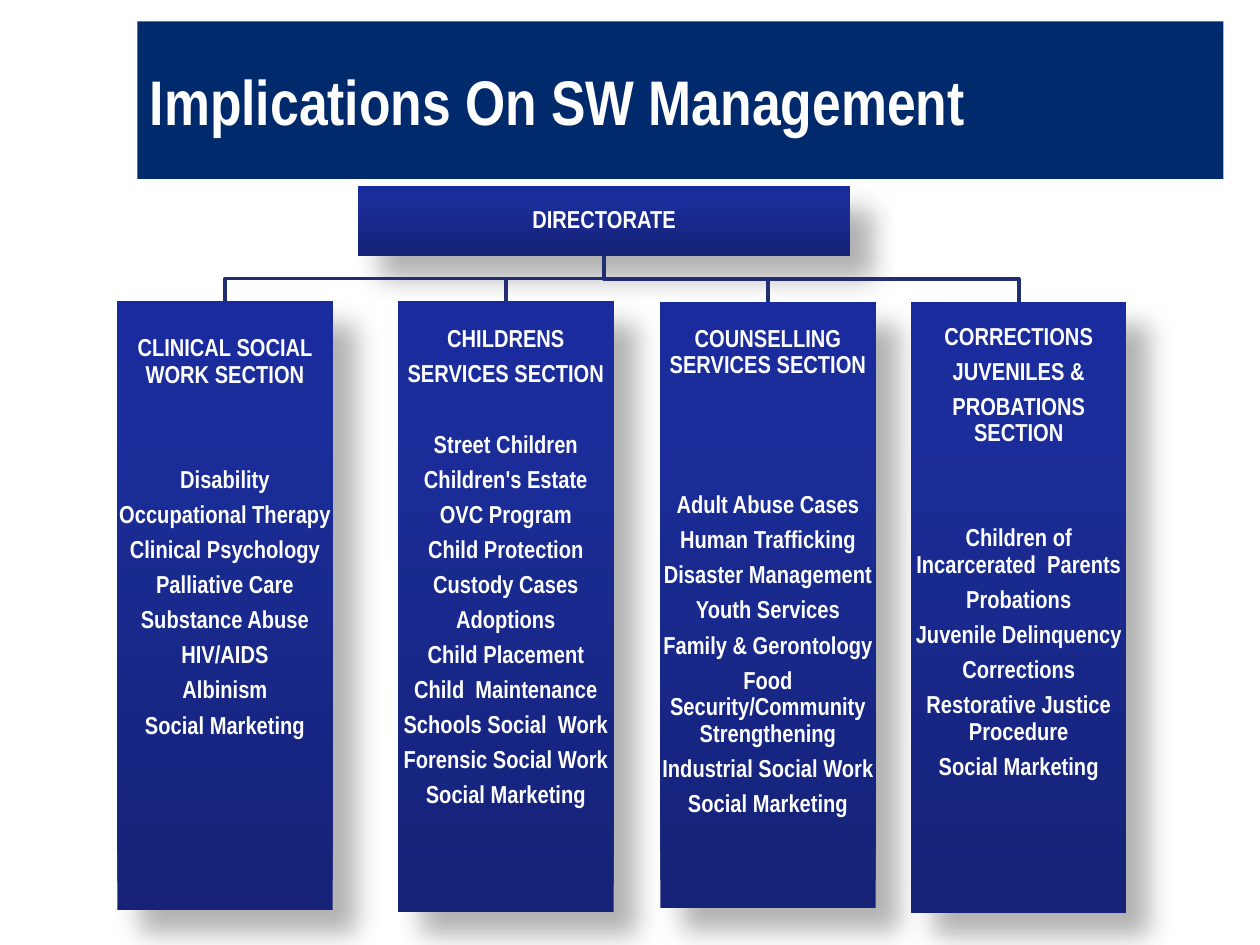
"""Build the social work management organisation chart slide."""
from lxml.etree import SubElement
from pptx import Presentation
from pptx.dml.color import RGBColor
from pptx.enum.shapes import MSO_CONNECTOR, MSO_SHAPE
from pptx.enum.text import MSO_ANCHOR, PP_ALIGN
from pptx.oxml.ns import qn
from pptx.util import Pt

COLORS = {"title": "002A6C", "line": "222E73", "text": "FFFFFF", "shadow": "000000"}
GRADIENT = [(0, "152277"), (80, "1B2D9A"), (100, "192B9D")]
FONT = "Arial Narrow"
TITLE = "Implications On SW Management"
DIRECTORATE = "DIRECTORATE"
SECTIONS = [
    {
        "box": (67, 172.1, 347.8), "inset": 19.8, "gap": 40,
        "heading": ["CLINICAL SOCIAL WORK SECTION"],
        "items": ["Disability", "Occupational Therapy", "Clinical Psychology", "Palliative Care",
                  "Substance Abuse", "HIV/AIDS", "Albinism", "Social Marketing"],
    },
    {
        "box": (227.5, 172.1, 349.2), "inset": 14.6, "gap": 20,
        "heading": ["CHILDRENS", "SERVICES SECTION"],
        "items": ["Street Children", "Children's Estate", "OVC Program", "Child Protection",
                  "Custody Cases", "Adoptions", "Child Placement", "Child  Maintenance",
                  "Schools Social  Work", "Forensic Social Work", "Social Marketing"],
    },
    {
        "box": (377.3, 172.8, 346.3), "inset": 13.5, "gap": 60,
        "heading": ["COUNSELLING SERVICES SECTION"],
        "items": ["Adult Abuse Cases", "Human Trafficking", "Disaster Management",
                  "Youth Services", "Family & Gerontology",
                  "Food Security/Community Strengthening", "Industrial Social Work",
                  "Social Marketing"],
    },
    {
        "box": (520.6, 172.8, 349.2), "inset": 12.3, "gap": 40,
        "heading": ["CORRECTIONS", "JUVENILES &", "PROBATIONS SECTION"],
        "items": ["Children of Incarcerated  Parents", "Probations", "Juvenile Delinquency",
                  "Corrections", "Restorative Justice Procedure", "Social Marketing"],
    },
]
SECTION_WIDTH = 123.1
INSET = 0.72


def add_run(paragraph, text, size):
    run = paragraph.add_run()
    run.text = text
    run.font.name = FONT
    run.font.size = Pt(size)
    run.font.bold = True
    run.font.color.rgb = RGBColor.from_string(COLORS["text"])


def add_rectangle(slide, left, top, width, height):
    shape = slide.shapes.add_shape(
        MSO_SHAPE.RECTANGLE, Pt(left), Pt(top), Pt(width), Pt(height))
    shape.shadow.inherit = False
    shape.line.fill.background()
    shape.text_frame.word_wrap = True
    return shape


def add_color(parent, color):
    return SubElement(parent, qn("a:srgbClr"), val=color)


def style_box(shape):
    shape.fill.gradient()
    shape.fill.gradient_angle = 90
    properties = shape.element.spPr
    stops = properties.find(qn("a:gradFill")).find(qn("a:gsLst"))
    for stop in list(stops):
        stops.remove(stop)
    for position, color in GRADIENT:
        add_color(SubElement(stops, qn("a:gs"), pos=str(position * 1000)), color)
    shadow = SubElement(
        properties.find(qn("a:effectLst")), qn("a:outerShdw"), blurRad=str(Pt(15)),
        dist=str(Pt(18)), dir=str(45 * 60000), algn="ctr", rotWithShape="0")
    SubElement(add_color(shadow, COLORS["shadow"]), qn("a:alpha"), val="30000")


def fill_box(shape, lines, anchor, top_inset=INSET, gap_index=None, gap=0):
    frame = shape.text_frame
    frame.vertical_anchor = anchor
    frame.margin_left = frame.margin_right = frame.margin_bottom = Pt(INSET)
    frame.margin_top = Pt(top_inset)
    for index, text in enumerate(lines):
        paragraph = frame.add_paragraph() if index else frame.paragraphs[0]
        paragraph.alignment = PP_ALIGN.CENTER
        paragraph.line_spacing = 0.9
        paragraph.space_after = Pt(4.9)
        if index == gap_index:
            paragraph.space_before = Pt(gap)
        add_run(paragraph, text, 14)


def add_branch(slide, parent, child):
    start_x, start_y = parent.left + parent.width // 2, parent.top + parent.height
    end_x, end_y = child.left + child.width // 2, child.top
    connector = slide.shapes.add_connector(
        MSO_CONNECTOR.ELBOW, start_x, start_y, end_x, end_y)
    connector.begin_connect(parent, 2)
    connector.end_connect(child, 0)
    connector.line.color.rgb = RGBColor.from_string(COLORS["line"])
    connector.line.width = Pt(2)
    properties = connector.element.spPr
    SubElement(properties, qn("a:effectLst"))
    to_right = end_x > start_x
    transform = properties.find(qn("a:xfrm"))
    transform.set("rot", str((270 if to_right else 90) * 60000))
    transform.set("flipH", "1" if to_right else "0")
    transform.set("flipV", "0")
    connector.width, connector.height = end_y - start_y, abs(end_x - start_x)
    connector.left = (start_x + end_x - connector.width) // 2
    connector.top = (start_y + end_y - connector.height) // 2


def main():
    presentation = Presentation()
    presentation.slide_width, presentation.slide_height = Pt(720), Pt(540)
    slide = presentation.slides.add_slide(presentation.slide_layouts[6])

    directorate = add_rectangle(slide, 204.5, 106.5, 281.5, 39.6)
    style_box(directorate)
    fill_box(directorate, [DIRECTORATE], MSO_ANCHOR.MIDDLE)

    for section in SECTIONS:
        left, top, height = section["box"]
        box = add_rectangle(slide, left, top, SECTION_WIDTH, height)
        style_box(box)
        fill_box(box, section["heading"] + section["items"], MSO_ANCHOR.TOP,
                 section["inset"], len(section["heading"]), section["gap"])
        add_branch(slide, directorate, box)

    banner = add_rectangle(slide, 78.5, 12.2, 620.6, 90)
    banner.fill.solid()
    banner.fill.fore_color.rgb = RGBColor.from_string(COLORS["title"])
    banner.text_frame.vertical_anchor = MSO_ANCHOR.MIDDLE
    paragraph = banner.text_frame.paragraphs[0]
    paragraph.alignment = PP_ALIGN.LEFT
    add_run(paragraph, TITLE, 36)

    presentation.save("out.pptx")


if __name__ == "__main__":
    main()
